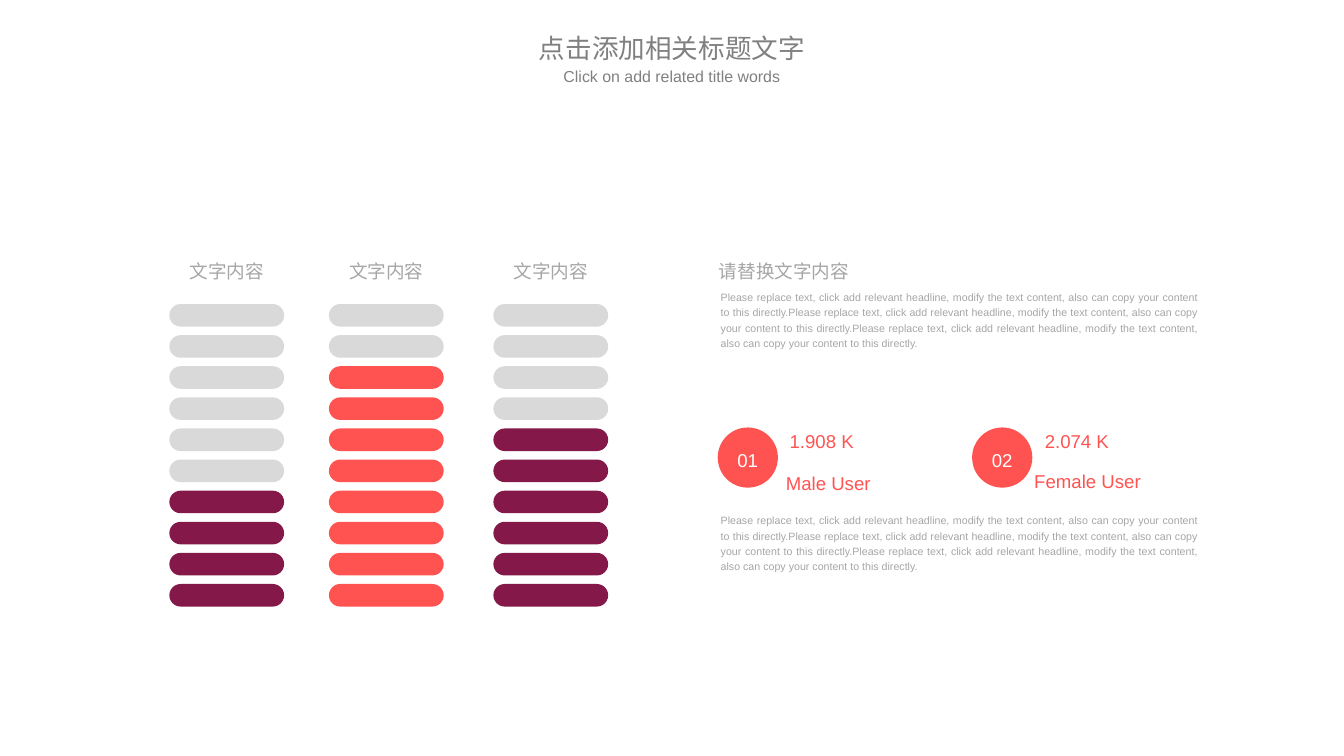
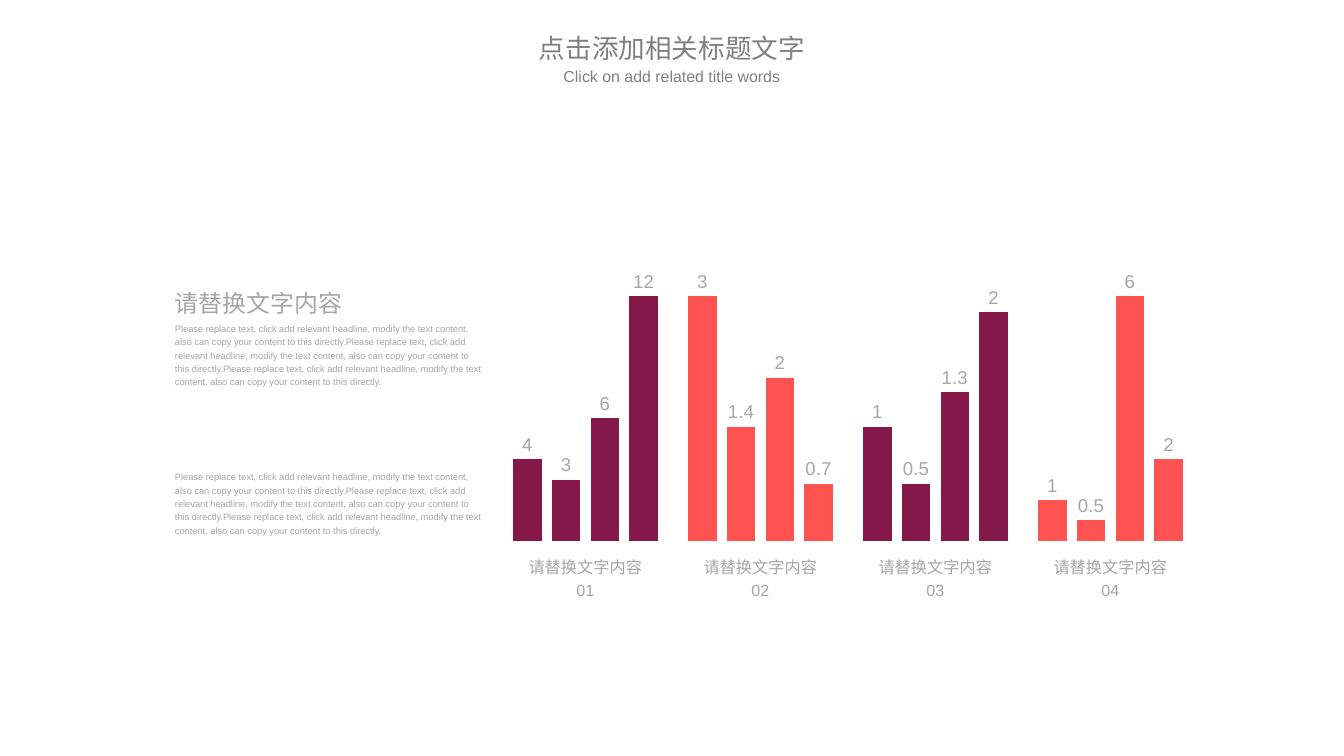
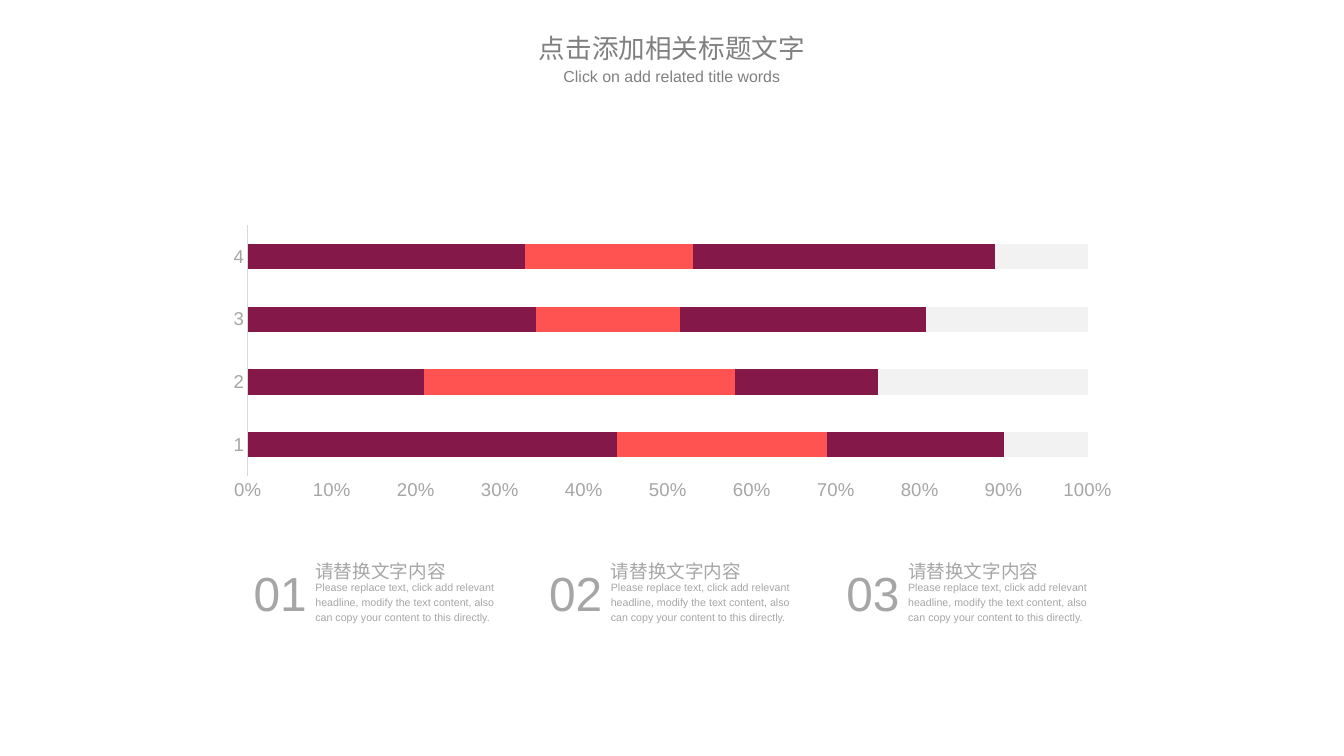
from pptx import Presentation
from pptx.chart.data import CategoryChartData
from pptx.dml.color import RGBColor
from pptx.enum.chart import XL_CHART_TYPE as ChartType
from pptx.enum.chart import XL_LABEL_POSITION as LabelPosition
from pptx.enum.chart import XL_TICK_MARK as TickMark
from pptx.enum.shapes import MSO_SHAPE as Shape
from pptx.enum.text import MSO_ANCHOR as Anchor
from pptx.enum.text import PP_ALIGN as Align
from pptx.oxml.ns import qn
from pptx.util import Cm, Pt

SLIDE_WIDTH, SLIDE_HEIGHT = 35.71, 20.09
PLUM, CORAL = "841849", "FF5351"
GRAY, TITLE_GRAY, WHITE = "A6A6A6", "808080", "FFFFFF"
PILL_GRAY, REST_GRAY, AXIS_GRAY = "D9D9D9", "F2F2F2", "D9D9D9"
FONT, CHINESE_FONT = "Arial", "Noto Sans CJK SC"

TITLE = "点击添加相关标题文字"
SUBTITLE = "Click on add related title words"
HEADING = "请替换文字内容"
SENTENCE = ("Please replace text, click add relevant headline, modify the text "
            "content, also can copy your content to this directly.")
PARAGRAPH = SENTENCE * 3
CATEGORIES = ["1", "2", "3", "4"]

# Left edge, filled pills, colour
PILL_COLUMNS = [(4.5, 4, PLUM), (8.74, 8, CORAL), (13.11, 6, PLUM)]
PILL_HEADING = "文字内容"
PILL_COUNT = 10
PILL_WIDTH, PILL_HEIGHT = 3.05, 0.6
FIRST_PILL_TOP, LAST_PILL_TOP = 8.08, 15.52

# Number, circle left, then text, left and top of each label
USER_STATS = [
    ("01", 19.07, [("1.908 K", 20.98, 11.3), ("Male User", 20.88, 12.42)]),
    ("02", 25.83, [("2.074 K", 27.76, 11.3), ("Female User", 27.48, 12.37)]),
]

# Values, axis maximum, colour
COLUMN_CHARTS = [
    ([4, 3, 6, 12], 14, PLUM),
    ([3, 1.4, 2, 0.7], 3.5, CORAL),
    ([1, 0.5, 1.3, 2], 2.5, PLUM),
    ([1, 0.5, 6, 2], 7, CORAL),
]

STACKED_SERIES = [
    ([44, 21, 34, 33], PLUM),
    ([25, 37, 17, 20], CORAL),
    ([21, 17, 29, 36], PLUM),
    ([10, 25, 19, 11], REST_GRAY),
]
NOTE_LEFTS = [6.48, 14.33, 22.23]


def color(hex_string):
    return RGBColor.from_string(hex_string)


def write(frame, text, size=14, hex_color=GRAY, align=Align.LEFT, spacing=1.2,
          anchor=Anchor.TOP, font=FONT):
    """Fill a text frame with one paragraph and no insets."""
    frame.margin_left = frame.margin_right = 0
    frame.margin_top = frame.margin_bottom = 0
    frame.word_wrap = True
    frame.vertical_anchor = anchor
    paragraph = frame.paragraphs[0]
    paragraph.alignment = align
    paragraph.line_spacing = spacing
    run = paragraph.add_run()
    run.text = text
    run.font.size = Pt(size)
    run.font.name = font
    run.font.color.rgb = color(hex_color)
    east_asian = run.font._element.makeelement(
        qn("a:ea"), {"typeface": CHINESE_FONT})
    run.font._element.find(qn("a:latin")).addnext(east_asian)


def add_text(slide, text, left, top, width, height, **text_format):
    box = slide.shapes.add_textbox(Cm(left), Cm(top), Cm(width), Cm(height))
    write(box.text_frame, text, **text_format)


def add_filled_shape(slide, kind, left, top, width, height, hex_color):
    shape = slide.shapes.add_shape(
        kind, Cm(left), Cm(top), Cm(width), Cm(height))
    shape.shadow.inherit = False
    shape.fill.solid()
    shape.fill.fore_color.rgb = color(hex_color)
    shape.line.fill.background()
    return shape


def add_titled_slide(presentation):
    slide = presentation.slides.add_slide(presentation.slide_layouts[6])
    width = 8.5
    left = (SLIDE_WIDTH - width) / 2
    centered = dict(hex_color=TITLE_GRAY, align=Align.CENTER, spacing=1.0)
    add_text(slide, TITLE, left, 0.86, width, 0.9, size=20,
             font=CHINESE_FONT, **centered)
    add_text(slide, SUBTITLE, left, 1.76, width, 0.7, size=12, **centered)
    return slide


def add_plain_chart(slide, kind, left, top, width, height, series, gap, overlap):
    """Add a chart without title, legend or gridlines from (values, colour) pairs."""
    data = CategoryChartData()
    data.categories = CATEGORIES
    for number, (values, _) in enumerate(series, 1):
        data.add_series(f"Series {number}", values)
    chart = slide.shapes.add_chart(
        kind, Cm(left), Cm(top), Cm(width), Cm(height), data).chart
    chart.has_title = chart.has_legend = False
    chart.font.size = Pt(14)
    chart.font.name = FONT
    chart.font.color.rgb = color(GRAY)
    chart.value_axis.has_major_gridlines = False
    chart.value_axis.minimum_scale = 0
    plot = chart.plots[0]
    plot.vary_by_categories = False
    plot.gap_width, plot.overlap = gap, overlap
    for chart_series, (_, hex_color) in zip(plot.series, series):
        chart_series.format.fill.solid()
        chart_series.format.fill.fore_color.rgb = color(hex_color)
        chart_series.invert_if_negative = False
    return chart


def build_pill_slide(presentation):
    slide = add_titled_slide(presentation)
    pitch = (LAST_PILL_TOP - FIRST_PILL_TOP) / (PILL_COUNT - 1)
    for left, filled, hex_color in PILL_COLUMNS:
        add_text(slide, PILL_HEADING, left, 6.91, PILL_WIDTH, 0.6,
                 align=Align.CENTER, spacing=1.0)
        for row in range(PILL_COUNT):
            is_filled = row >= PILL_COUNT - filled
            pill = add_filled_shape(
                slide, Shape.ROUNDED_RECTANGLE, left,
                FIRST_PILL_TOP + row * pitch, PILL_WIDTH, PILL_HEIGHT,
                hex_color if is_filled else PILL_GRAY)
            pill.adjustments[0] = 0.5

    add_text(slide, HEADING, 19.1, 6.78, 11.38, 0.66)
    for top in (7.67, 13.6):
        add_text(slide, PARAGRAPH, 19.15, top, 12.7, 1.65, size=8,
                 align=Align.JUSTIFY)
    for number, circle_left, labels in USER_STATS:
        circle = add_filled_shape(
            slide, Shape.OVAL, circle_left, 11.36, 1.6, 1.6, CORAL)
        write(circle.text_frame, number, hex_color=WHITE, align=Align.CENTER,
              anchor=Anchor.MIDDLE)
        for text, left, top in labels:
            add_text(slide, text, left, top, 3.2, 0.66, hex_color=CORAL)


def build_column_slide(presentation):
    slide = add_titled_slide(presentation)
    chart_width, caption_width = 4.29, 3.3
    for index, (values, maximum, hex_color) in enumerate(COLUMN_CHARTS):
        left = 13.41 + index * 4.65
        chart = add_plain_chart(
            slide, ChartType.COLUMN_CLUSTERED, left, 6.63, chart_width, 7.9,
            [(values, hex_color)], gap=36, overlap=-20)
        chart.value_axis.maximum_scale = maximum
        chart.value_axis.visible = chart.category_axis.visible = False
        labels = chart.plots[0].series[0].data_labels
        labels.show_value = True
        labels.position = LabelPosition.OUTSIDE_END
        labels.font.size = Pt(14)
        labels.font.name = FONT
        labels.font.color.rgb = color(GRAY)
        add_text(slide, f"{HEADING} {index + 1:02}",
                 left + (chart_width - caption_width) / 2, 14.71,
                 caption_width, 1.3, size=12.2, align=Align.CENTER)

    add_text(slide, HEADING, 4.65, 7.52, 7.11, 0.91, size=18)
    for top in (8.53, 12.47):
        add_text(slide, PARAGRAPH, 4.65, top, 8.15, 1.78, size=7)


def build_stacked_slide(presentation):
    slide = add_titled_slide(presentation)
    chart = add_plain_chart(
        slide, ChartType.BAR_STACKED_100, 5.72, 5.84, 24.31, 7.62,
        STACKED_SERIES, gap=150, overlap=100)
    for axis in (chart.category_axis, chart.value_axis):
        axis.major_tick_mark = axis.minor_tick_mark = TickMark.NONE
    chart.category_axis.format.line.color.rgb = color(AXIS_GRAY)
    chart.category_axis.format.line.width = Pt(0.75)
    value_axis = chart.value_axis
    value_axis.format.line.fill.background()
    value_axis.maximum_scale, value_axis.major_unit = 1, 0.1
    value_axis.tick_labels.number_format = "0%"
    value_axis.tick_labels.number_format_is_linked = False

    for number, left in enumerate(NOTE_LEFTS, 1):
        text_left = left + 1.9
        add_text(slide, f"{number:02}", left, 14.68, 1.93, 1.85, size=36,
                 align=Align.CENTER)
        add_text(slide, HEADING, text_left, 14.76, 4.7, 0.71)
        add_text(slide, SENTENCE, text_left, 15.37, 5.03, 1.19, size=8)


def main():
    presentation = Presentation()
    presentation.slide_width = Cm(SLIDE_WIDTH)
    presentation.slide_height = Cm(SLIDE_HEIGHT)
    build_pill_slide(presentation)
    build_column_slide(presentation)
    build_stacked_slide(presentation)
    presentation.save("out.pptx")


if __name__ == "__main__":
    main()
